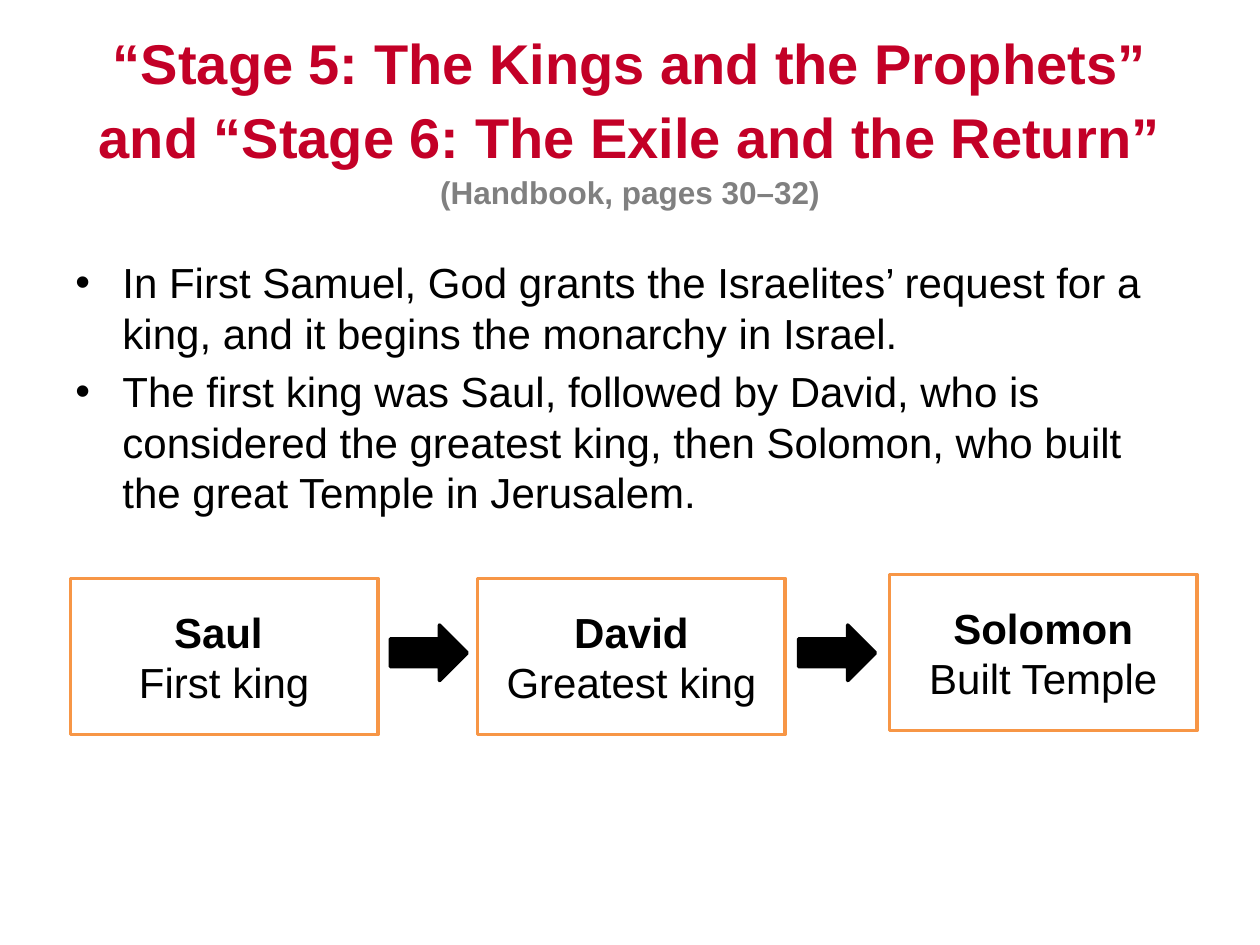
import copy
from dataclasses import dataclass

import pptx
import pptx.dml.color
import pptx.enum.shapes
import pptx.enum.text
import pptx.oxml
import pptx.oxml.ns
import pptx.util
from pptx.util import Cm, Pt

RGB = pptx.dml.color.RGBColor.from_string
KIND = pptx.enum.shapes.MSO_SHAPE
ALIGN = pptx.enum.text.PP_ALIGN
ANCHOR = pptx.enum.text.MSO_ANCHOR
FIT = pptx.enum.text.MSO_AUTO_SIZE


@dataclass(frozen=True)
class Theme:
    font: str = "Arial"
    red: str = "C30027"
    gray: str = "808080"
    black: str = "000000"
    white: str = "FFFFFF"
    edge: str = "F79646"
    head: int = 32
    text: int = 24
    note: int = 18
    line: int = 2


THEME = Theme()


def add_run(para, text, size, color, bold=False):
    run = para.add_run()
    run.text = text
    run.font.name = THEME.font
    run.font.size = Pt(size)
    run.font.bold = bold
    run.font.color.rgb = RGB(color)
    return run


def place(shape, left, top, width, height):
    shape.left, shape.top = Cm(left), Cm(top)
    shape.width, shape.height = Cm(width), Cm(height)


def set_title(slide, text, note):
    title = slide.shapes.title
    place(title, 1.27, 0.76, 22.86, 3.18)
    frame = title.text_frame
    frame.auto_size = FIT.NONE
    frame.vertical_anchor = ANCHOR.MIDDLE
    para = frame.paragraphs[0]
    para.alignment = ALIGN.CENTER
    para.line_spacing = 1.1
    run = add_run(para, text, THEME.head, THEME.red, True)
    para.add_line_break()
    # The break takes the heading's size, so it does not stretch its line.
    para._p[-1].append(copy.deepcopy(run._r.rPr))
    add_run(para, note, THEME.note, THEME.gray, True)


def add_bullet(para, text):
    props = para._p.get_or_add_pPr()
    props.set("marL", str(Cm(0.95)))
    props.set("indent", str(-Cm(0.95)))
    space = pptx.oxml.ns.nsdecls("a")
    props.append(pptx.oxml.parse_xml(f'<a:buFont {space} typeface="{THEME.font}"/>'))
    props.append(pptx.oxml.parse_xml(f'<a:buChar {space} char="•"/>'))
    add_run(para, text, THEME.text, THEME.black)


def add_list(slide, items):
    box = slide.shapes.add_textbox(Cm(1.27), Cm(5.05), Cm(22.86), Cm(12.57))
    frame = box.text_frame
    frame.word_wrap = True
    for i, item in enumerate(items):
        para = frame.add_paragraph() if i else frame.paragraphs[0]
        add_bullet(para, item)
        if i:
            para.space_before = Pt(0.2 * THEME.text)


def add_shape(slide, kind, spot, fill, edge):
    shape = slide.shapes.add_shape(kind, *map(Cm, spot))
    shape.shadow.inherit = False
    shape.fill.solid()
    shape.fill.fore_color.rgb = RGB(fill)
    shape.line.color.rgb = RGB(edge)
    shape.line.width = Pt(THEME.line)
    return shape


def add_king(slide, left, top, name, deed):
    box = add_shape(slide, KIND.RECTANGLE, (left, top, 6.2, 3.15),
                    THEME.white, THEME.edge)
    frame = box.text_frame
    frame.word_wrap = True
    frame.vertical_anchor = ANCHOR.MIDDLE
    lines = frame.paragraphs[0], frame.add_paragraph()
    for para, text, bold in zip(lines, (name, deed), (True, False)):
        para.alignment = ALIGN.CENTER
        add_run(para, text, THEME.text, THEME.black, bold)


def add_arrow(slide, left):
    add_shape(slide, KIND.RIGHT_ARROW, (left, 12.6, 1.55, 1.12),
              THEME.black, THEME.black)


def main():
    deck = pptx.Presentation()
    deck.slide_width, deck.slide_height = Cm(25.4), Cm(19.05)
    slide = deck.slides.add_slide(deck.slide_layouts[5])

    set_title(slide,
              "“Stage 5: The Kings and the Prophets” "
              "and “Stage 6: The Exile and the Return”",
              "(Handbook, pages 30–32)")
    kings = [
        (1.42, 11.66, "Saul ", "First king"),
        (9.63, 11.66, "David", "Greatest king"),
        (17.93, 11.58, "Solomon", "Built Temple"),
    ]
    for king in kings:
        add_king(slide, *king)
    for left in (7.87, 16.1):
        add_arrow(slide, left)
    add_list(slide, [
        "In First Samuel, God grants the Israelites’ request for a king, "
        "and it begins the monarchy in Israel.",
        "The first king was Saul, followed by David, who is considered the "
        "greatest king, then Solomon, who built the great Temple in Jerusalem.",
    ])
    deck.save("out.pptx")


if __name__ == "__main__":
    main()
